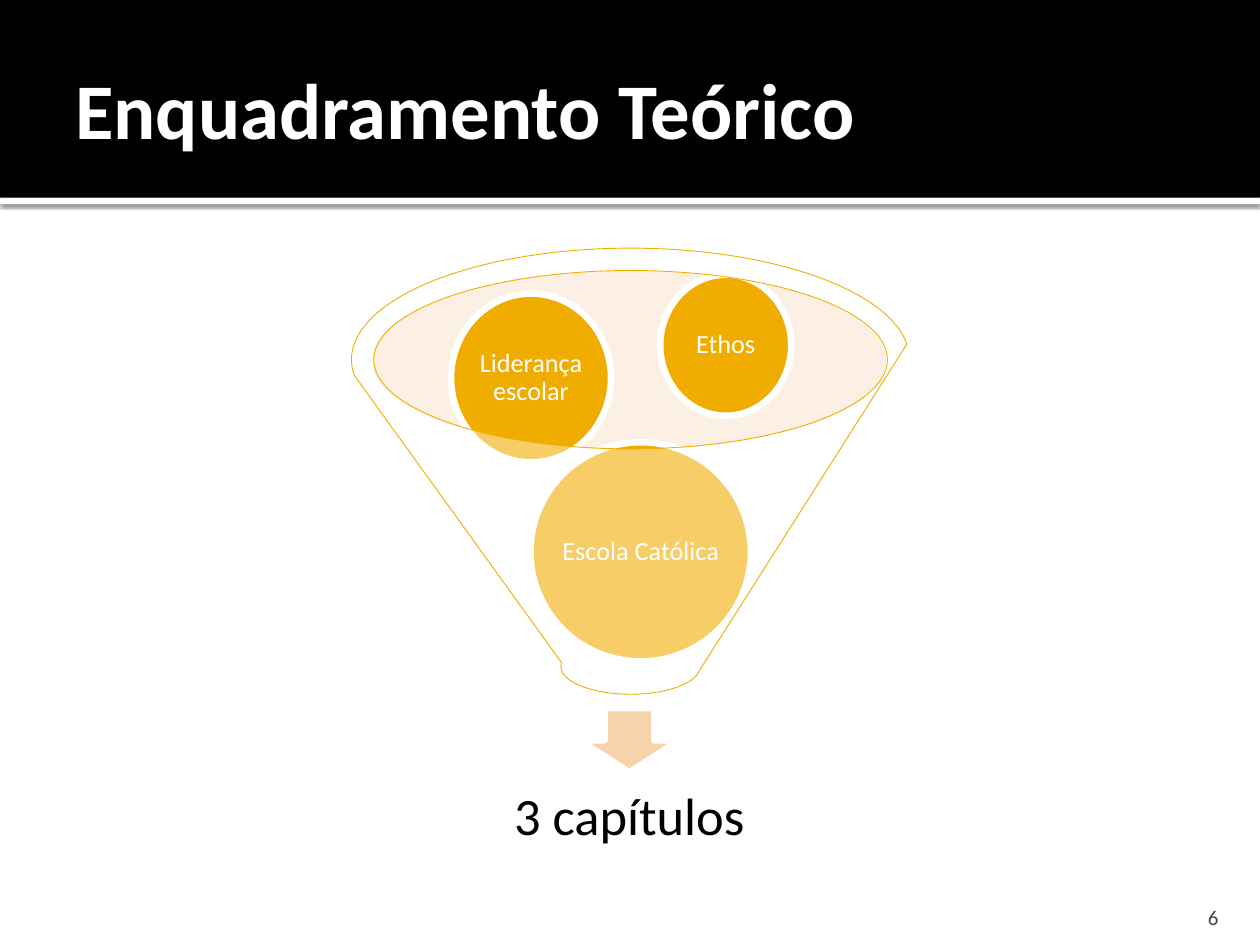
"""Build the theoretical framework slide: a funnel of three themes leading to three chapters."""
from pptx import Presentation
from pptx.dml.color import RGBColor
from pptx.enum.shapes import MSO_SHAPE
from pptx.enum.text import MSO_ANCHOR, PP_ALIGN
from pptx.oxml import parse_xml
from pptx.oxml.ns import nsdecls, qn
from pptx.util import Inches, Pt
from lxml.etree import SubElement

TITLE = "Enquadramento Teórico"
RESULT = "3 capítulos"
PAGE_NUMBER = "6"
THEMES = [
    ("Escola Católica", (4.21, 3.51, 1.75, 1.74), False),
    ("Liderança escolar", (3.58, 2.33, 1.27, 1.34), True),
    ("Ethos", (5.24, 2.18, 1.04, 1.12), False),
]
FONT = "Calibri"
WHITE, BLACK, GOLD = "FFFFFF", "000000", "F0AD00"
PEACH, CREAM, GREY = "F6D3AB", "F8DBBD", "454545"
OUTLINE = 3.78

SHADOW = (
    f'<a:effectLst {nsdecls("a")}><a:outerShdw blurRad="{Pt(2.5)}" dist="{Pt(0.8)}" '
    'dir="5400000" algn="tl" rotWithShape="0"><a:srgbClr val="000000">'
    '<a:alpha val="60000"/></a:srgbClr></a:outerShdw></a:effectLst>'
)


def paint(color_format, color):
    color_format.rgb = RGBColor.from_string(color)


def add_figure(slide, preset, box, fill, opacity=100, line=None, line_width=0):
    figure = slide.shapes.add_shape(preset, *map(Inches, box))
    figure.shadow.inherit = False
    figure.fill.solid()
    paint(figure.fill.fore_color, fill)
    if opacity < 100:
        color = figure.fill._xPr.find(qn("a:solidFill"))[0]
        SubElement(color, qn("a:alpha")).set("val", str(opacity * 1000))
    if line:
        paint(figure.line.color, line)
        figure.line.width = Pt(line_width)
    else:
        figure.line.fill.background()
    return figure


def write(holder, text, size, color, align, anchor=MSO_ANCHOR.MIDDLE,
          insets=(0.02,) * 4, wrap=True, bold=False, spacing=None):
    frame = holder.text_frame
    frame.text = text
    frame.word_wrap = wrap
    frame.vertical_anchor = anchor
    (frame.margin_left, frame.margin_top,
     frame.margin_right, frame.margin_bottom) = map(Inches, insets)
    paragraph = frame.paragraphs[0]
    paragraph.alignment = align
    paragraph.line_spacing = spacing
    font = paragraph.runs[0].font
    font.name, font.size, font.bold = FONT, Pt(size), bold
    paint(font.color, color)


def add_label(slide, box, *args, **options):
    write(slide.shapes.add_textbox(*map(Inches, box)), *args, **options)


def main():
    deck = Presentation()
    deck.slide_width, deck.slide_height = Inches(10), Inches(7.5)
    slide = deck.slides.add_slide(deck.slide_layouts[6])

    stripe = add_figure(slide, MSO_SHAPE.RECTANGLE, (0, 1.57, 10, 0.05), WHITE)
    properties = stripe._element.spPr
    properties.replace(properties.find(qn("a:effectLst")), parse_xml(SHADOW))
    add_figure(slide, MSO_SHAPE.RECTANGLE, (0, 0, 10, 1.57), BLACK)
    add_label(slide, (0.5, 0.17, 9, 1.37), TITLE, 45, WHITE, PP_ALIGN.LEFT,
              insets=(0.1, 0.05, 0.05, 0.05), bold=True)

    add_figure(slide, MSO_SHAPE.OVAL, (2.95, 2.15, 4.08, 1.42), CREAM, opacity=40)
    add_figure(slide, MSO_SHAPE.DOWN_ARROW, (4.6, 5.62, 0.79, 0.51), PEACH,
               line=WHITE, line_width=OUTLINE)
    add_label(slide, (3.1, 6.02, 3.79, 0.95), RESULT, 30, BLACK, PP_ALIGN.CENTER,
              insets=(0.23,) * 4, spacing=0.9)
    for theme, box, wrap in THEMES:
        circle = add_figure(slide, MSO_SHAPE.OVAL, box, GOLD,
                            line=WHITE, line_width=OUTLINE)
        write(circle, theme, 15, WHITE, PP_ALIGN.CENTER, wrap=wrap, spacing=0.9)
    add_figure(slide, MSO_SHAPE.FUNNEL, (2.79, 1.97, 4.43, 3.54), WHITE,
               opacity=40, line=GOLD, line_width=0.5)

    add_label(slide, (8.97, 7.08, 0.8, 0.3), PAGE_NUMBER, 12, GREY, PP_ALIGN.RIGHT,
              anchor=MSO_ANCHOR.BOTTOM, insets=(0.1, 0.05, 0.1, 0))
    deck.save("out.pptx")


if __name__ == "__main__":
    main()
